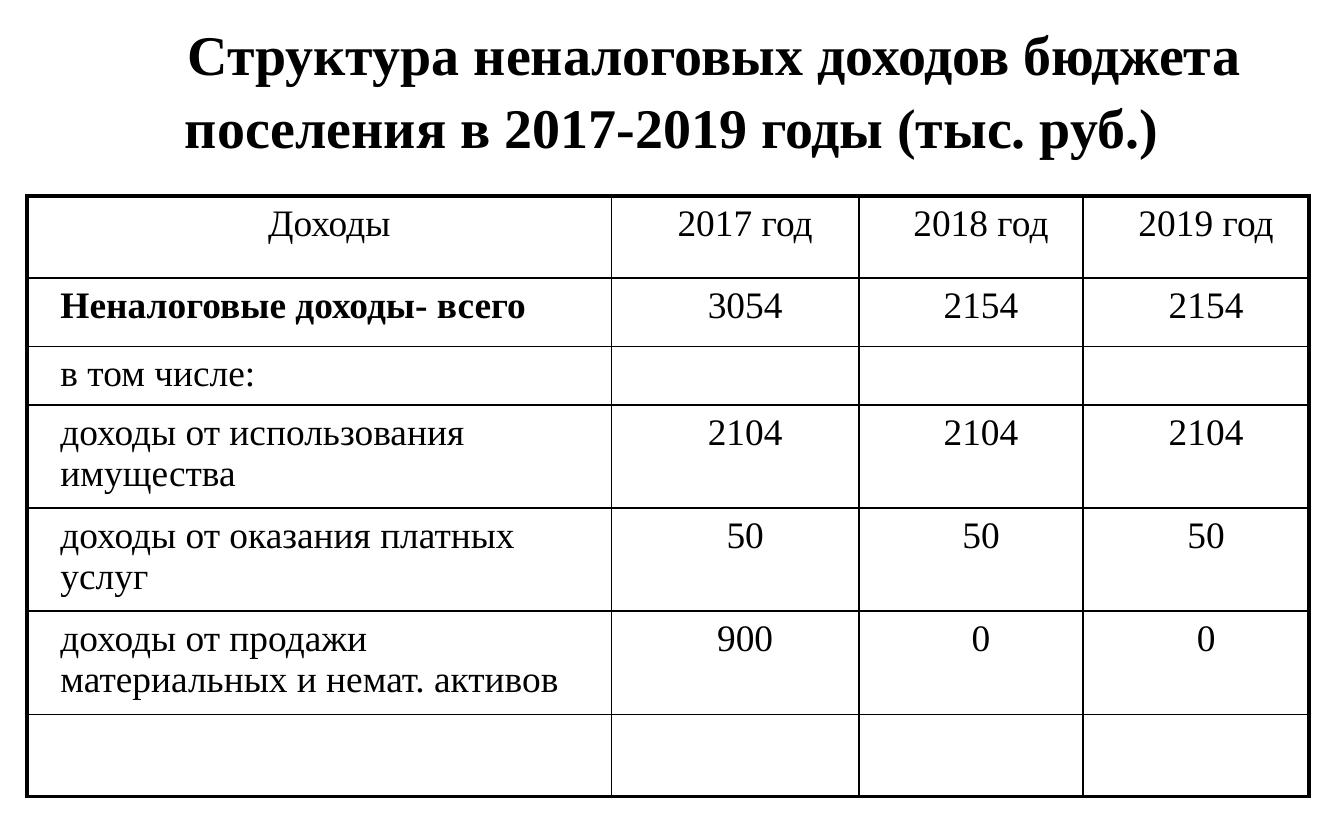
"""Build a slide with a table of a settlement's non-tax budget income for 2017-2019."""
from lxml.etree import SubElement
from pptx import Presentation
from pptx.dml.color import RGBColor
from pptx.enum.text import MSO_ANCHOR, PP_ALIGN
from pptx.oxml.ns import qn
from pptx.util import Inches, Pt

BLACK = "000000"
INCOME = [
    ["Доходы", "2017 год", "2018 год", "2019 год"],
    ["Неналоговые доходы- всего", "3054", "2154", "2154"],
    ["в том числе:", "", "", ""],
    ["доходы от использования имущества", "2104", "2104", "2104"],
    ["доходы от оказания платных услуг", "50", "50", "50"],
    ["доходы от продажи материальных и немат. активов", "900", "0", "0"],
    ["", "", "", ""],
]
COLUMN_WIDTHS = [4.35, 1.84, 1.67, 1.68]
ROW_HEIGHTS = [0.61, 0.51, 0.4, 0.72, 0.72, 0.72, 0.61]


def write(paragraph, text, align, indent, **font_format):
    properties = paragraph._p.get_or_add_pPr()
    for name, inches in indent.items():
        properties.set(name, str(Inches(inches)))
    paragraph.alignment = align
    run = paragraph.add_run()
    run.text = text
    run.font.color.rgb = RGBColor.from_string(BLACK)
    for name, value in {"name": "Times New Roman", **font_format}.items():
        setattr(run.font, name, value)


def add_border(cell, side, points):
    line = SubElement(cell._tc.get_or_add_tcPr(), qn(f"a:{side}"), w=str(Pt(points)))
    SubElement(SubElement(line, qn("a:solidFill")), qn("a:srgbClr"), val=BLACK)


presentation = Presentation()
presentation.slide_width, presentation.slide_height = Inches(10), Inches(6.25)
slide = presentation.slides.add_slide(presentation.slide_layouts[6])

heading = slide.shapes.add_textbox(0, 0, Inches(10), Inches(1.29)).text_frame
for name, value in {"word_wrap": True, "vertical_anchor": MSO_ANCHOR.MIDDLE}.items():
    setattr(heading, name, value)
heading.paragraphs[0].line_spacing = 1.08
write(heading.paragraphs[0],
      "Структура неналоговых доходов бюджета поселения в 2017-2019 годы (тыс. руб.)",
      PP_ALIGN.CENTER, {"indent": 0.63}, size=Pt(30), bold=True)

last_row, last_column = len(ROW_HEIGHTS) - 1, len(COLUMN_WIDTHS) - 1
income_table = slide.shapes.add_table(
    len(ROW_HEIGHTS), len(COLUMN_WIDTHS), Inches(0.2), Inches(1.46),
    Inches(sum(COLUMN_WIDTHS)), Inches(sum(ROW_HEIGHTS))).table
for name, value in {"first_row": False, "horz_banding": False}.items():
    setattr(income_table, name, value)
for column, width in zip(income_table.columns, COLUMN_WIDTHS):
    column.width = Inches(width)
for row, height in zip(income_table.rows, ROW_HEIGHTS):
    row.height = Inches(height)

for r, entries in enumerate(INCOME):
    for c, entry in enumerate(entries):
        cell = income_table.cell(r, c)
        outer_sides = {"lnL": c == 0, "lnR": c == last_column,
                       "lnT": r == 0, "lnB": r == last_row}
        for side, is_outer in outer_sides.items():
            add_border(cell, side, 2.25 if is_outer else 1)
        cell.fill.background()
        if entry:
            align = PP_ALIGN.LEFT if c == 0 and r > 0 else PP_ALIGN.CENTER
            write(cell.text_frame.paragraphs[0], entry, align,
                  {"marL": 0.15, "indent": 0}, size=Pt(20), bold=(r, c) == (1, 0))

presentation.save("out.pptx")
